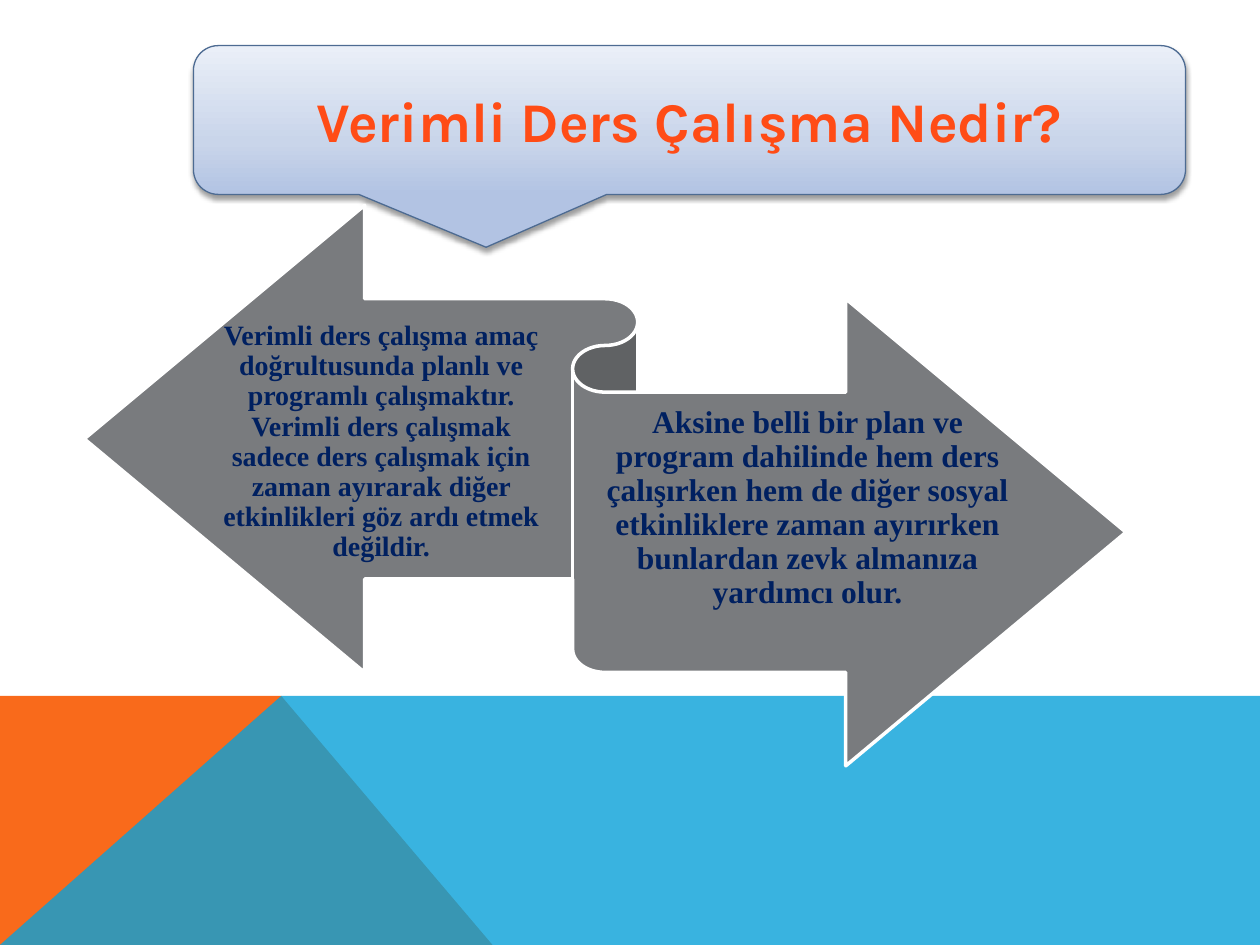
from dataclasses import dataclass

import lxml.etree
import pptx
import pptx.dml.color
import pptx.enum.shapes
import pptx.enum.text
import pptx.oxml
import pptx.oxml.ns
import pptx.util

Cm = pptx.util.Cm
Pt = pptx.util.Pt
RGB = pptx.dml.color.RGBColor.from_string
SHAPES = pptx.enum.shapes.MSO_SHAPE
qn = pptx.oxml.ns.qn


@dataclass(frozen=True)
class Theme:
    orange: str = "F96A1B"
    blue: str = "08A1D9"
    ribbon: str = "797B7E"
    ribbon_line: str = "FFFFFF"
    callout_line: str = "4D6B92"
    callout_stops: tuple = ((0, "B2C3E3"), (35, "C9D5EA"), (100, "EAEFF8"))
    title: str = "FF4C16"
    body: str = "002060"
    title_font: str = "Karla"
    body_font: str = "Times New Roman"
    title_size: int = 32


@dataclass(frozen=True)
class Box:
    left: float
    top: float
    width: float
    height: float

    def lengths(self) -> tuple:
        return Cm(self.left), Cm(self.top), Cm(self.width), Cm(self.height)


@dataclass(frozen=True)
class ArrowText:
    box: Box
    size: int
    text: str


THEME = Theme()
WIDTH, HEIGHT = 25.4, 19.05
BAND_TOP, PEAK, FOOT = 14.03, 5.67, 9.93

ARROW_TEXTS = (
    ArrowText(Box(4.22, 6.86, 6.93, 4.11), 16,
              "Verimli ders çalışma amaç doğrultusunda planlı ve programlı çalışmaktır. "
              "Verimli ders çalışmak sadece ders çalışmak için zaman ayırarak diğer "
              "etkinlikleri göz ardı etmek değildir."),
    ArrowText(Box(12.19, 8.2, 8.18, 4.11), 18,
              "Aksine belli bir plan ve program dahilinde hem ders çalışırken hem de diğer "
              "sosyal etkinliklere zaman ayırırken bunlardan zevk almanıza yardımcı olur."),
)


def add_polygon(slide, points: tuple, color: str, opacity: int = 100) -> None:
    corners = [(Cm(x), Cm(y)) for x, y in points]
    builder = slide.shapes.build_freeform(*corners[0])
    builder.add_line_segments(corners[1:], close=True)
    shape = builder.convert_to_shape()
    shape.shadow.inherit = False
    shape.fill.solid()
    shape.fill.fore_color.rgb = RGB(color)
    shape.line.fill.background()
    if opacity < 100:
        color_element = shape._element.spPr.find(qn("a:solidFill"))[0]
        lxml.etree.SubElement(color_element, qn("a:alpha"), val=str(opacity * 1000))


def set_gradient(shape, stops: tuple, angle: int) -> None:
    """Fill with any number of (percent, colour) stops."""
    shape.fill.gradient()
    shape.fill.gradient_angle = angle
    stop_list = shape._element.spPr.find(qn("a:gradFill")).find(qn("a:gsLst"))
    for stop in list(stop_list):
        stop_list.remove(stop)
    for percent, color in stops:
        stop = lxml.etree.SubElement(stop_list, qn("a:gs"), pos=str(percent * 1000))
        lxml.etree.SubElement(stop, qn("a:srgbClr"), val=color)


def add_drop_shadow(shape, blur: float, distance: float, opacity: int) -> None:
    shape.shadow.inherit = False
    effects = shape._element.spPr.find(qn("a:effectLst"))
    shadow = lxml.etree.SubElement(
        effects, qn("a:outerShdw"), blurRad=str(Pt(blur)), dist=str(Pt(distance)),
        dir="5400000", rotWithShape="0")
    color = lxml.etree.SubElement(shadow, qn("a:srgbClr"), val="000000")
    lxml.etree.SubElement(color, qn("a:alpha"), val=str(opacity * 1000))


def write_text(shape, text: str, font: str, size: int, color: str):
    """Write one bold, centred paragraph and return it."""
    frame = shape.text_frame
    frame.word_wrap = True
    frame.vertical_anchor = pptx.enum.text.MSO_ANCHOR.MIDDLE
    paragraph = frame.paragraphs[0]
    paragraph.text = text
    paragraph.alignment = pptx.enum.text.PP_ALIGN.CENTER
    paragraph.font.name = font
    paragraph.font.size = Pt(size)
    paragraph.font.bold = True
    paragraph.font.color.rgb = RGB(color)
    return paragraph


def add_title_callout(slide) -> None:
    callout = slide.shapes.add_shape(
        SHAPES.ROUNDED_RECTANGULAR_CALLOUT, *Box(3.9, 0.92, 20, 3).lengths())
    for index, value in enumerate((-0.205, 0.855, 0.167)):
        callout.adjustments[index] = value
    set_gradient(callout, THEME.callout_stops, 90)
    callout.line.color.rgb = RGB(THEME.callout_line)
    callout.line.width = Pt(0.75)
    add_drop_shadow(callout, 3.1, 1.6, 38)
    write_text(callout, "Verimli Ders Çalışma Nedir?",
               THEME.title_font, THEME.title_size, THEME.title)


def add_ribbon(slide) -> None:
    ribbon = slide.shapes.add_shape(
        SHAPES.LEFT_RIGHT_RIBBON, *Box(1.7, 4.14, 21, 11.3).lengths())
    ribbon.shadow.inherit = False
    ribbon.fill.solid()
    ribbon.fill.fore_color.rgb = RGB(THEME.ribbon)
    ribbon.line.color.rgb = RGB(THEME.ribbon_line)
    ribbon.line.width = Pt(2)


def add_arrow_text(slide, item: ArrowText) -> None:
    box = slide.shapes.add_textbox(*item.box.lengths())
    frame = box.text_frame
    frame.margin_left = frame.margin_right = 0
    frame.margin_top = frame.margin_bottom = Cm(0.17)
    paragraph = write_text(box, item.text, THEME.body_font, item.size, THEME.body)
    paragraph.line_spacing = 0.9


def main() -> None:
    presentation = pptx.Presentation()
    presentation.slide_width, presentation.slide_height = Cm(WIDTH), Cm(HEIGHT)
    slide = presentation.slides.add_slide(presentation.slide_layouts[6])

    add_polygon(slide, ((0, HEIGHT), (0, BAND_TOP), (PEAK, BAND_TOP), (FOOT, HEIGHT)),
                THEME.orange)
    add_polygon(slide, ((0, HEIGHT), (PEAK, BAND_TOP), (WIDTH, BAND_TOP), (WIDTH, HEIGHT)),
                THEME.blue, opacity=80)
    add_title_callout(slide)
    add_ribbon(slide)
    for item in ARROW_TEXTS:
        add_arrow_text(slide, item)

    presentation.save("out.pptx")


if __name__ == "__main__":
    main()
